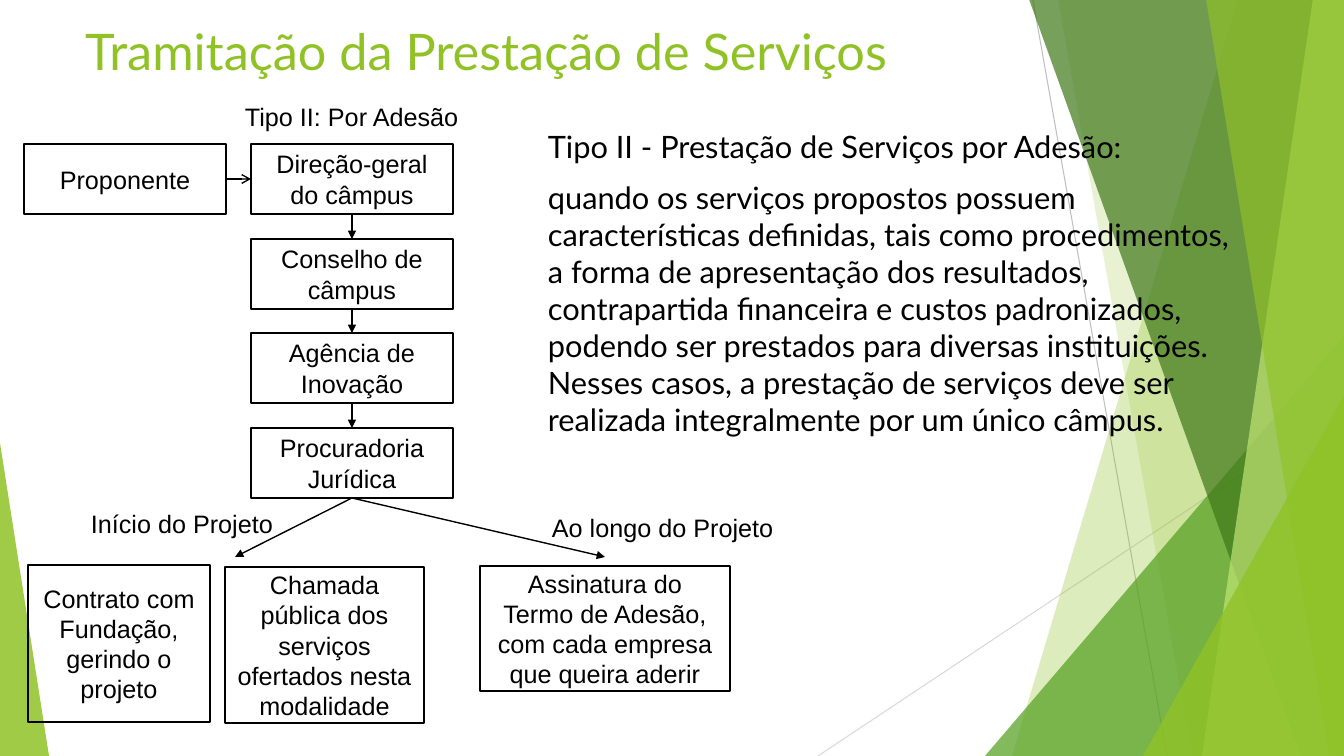
import pptx
import pptx.util
from lxml import etree
from pptx.dml.color import RGBColor
from pptx.enum.shapes import MSO_CONNECTOR, MSO_SHAPE
from pptx.enum.text import MSO_ANCHOR, MSO_AUTO_SIZE, PP_ALIGN
from pptx.oxml.ns import qn

WIDTH, HEIGHT = 1344, 756
EMU_PER_PX = 914400 / 100.8
COLORS = {
    "black": "000000", "lime": "90C226", "green": "54A021", "forest": "3F7819",
    "pale": "C0E474", "gray": "BFBFBF", "light gray": "D9D9D9",
}

TITLE = "Tramitação da Prestação de Serviços"
TITLE_BOX = (75, 15, 948, 80)
BODY = [
    "Tipo II - Prestação de Serviços por Adesão:",
    "quando os serviços propostos possuem características definidas, tais como "
    "procedimentos, a forma de apresentação dos resultados, contrapartida financeira "
    "e custos padronizados, podendo ser prestados para diversas instituições. Nesses "
    "casos, a prestação de serviços deve ser realizada integralmente por um único câmpus.",
]
BODY_BOX = (538, 123, 717, 345)

# Background, back to front: color, opacity in percent, then geometry
BACK_LINES = [("gray", (1033, 0), (1167, 756)), ("light gray", (1344, 406), (818, 756))]
BACK_SHAPES = [
    ("band", "lime", 30, (1238, 1012)),  # top and bottom x of the left edge
    ("band", "lime", 20, (1058, 1192)),
    ("triangle", "green", 72, (985, 336, 359, 420), 1),  # box, apex position
    ("band", "forest", 70, (1029, 1301)),
    ("band", "pale", 70, (1313, 1202)),
    ("band", "lime", 65, (1206, 1329)),
    ("triangle", "lime", 80, (1143, 396, 201, 360), 1),
    ("triangle", "lime", 85, (0, 443, 49, 313), 0),
]

STEPS = ["Direção-geral do câmpus", "Conselho de câmpus",
         "Agência de Inovação", "Procuradoria Jurídica"]
STEP_LEFT, STEP_TOP, STEP_WIDTH, STEP_HEIGHT = 251, 144, 202, 70
LAST_STEP_TOP = 428
PROPONENT_LEFT = 24
OUTCOMES = [
    ("Contrato com Fundação, gerindo o projeto", (28, 565, 182, 157)),
    ("Chamada pública dos serviços ofertados nesta modalidade", (225, 567, 199, 156)),
    ("Assinatura do Termo de Adesão, com cada empresa que queira aderir",
     (480, 566, 250, 125)),
]
BRANCH_ENDS = [(235, 557), (605, 557)]
LABELS = [
    ("Tipo II: Por Adesão", (235, 96, 236, 40)),
    ("Início do Projeto", (81, 503, 209, 40)),
    ("Ao longo do Projeto", (542, 507, 244, 40)),
]


def px(*lengths):
    return [pptx.util.Emu(round(length * EMU_PER_PX)) for length in lengths]


def rgb(name):
    return RGBColor.from_string(COLORS[name])


def write(shape, paragraphs, font, size, color="black", align=PP_ALIGN.LEFT, before=0):
    frame = shape.text_frame
    frame.text = "\n".join(paragraphs)
    for paragraph in frame.paragraphs:
        paragraph.alignment = align
        paragraph.space_before = pptx.util.Pt(before)
        paragraph.font.name = font
        paragraph.font.size = pptx.util.Pt(size)
        paragraph.font.color.rgb = rgb(color)
    return frame


def add_line(shapes, start, end, color="black", width=1, head=None):
    line = shapes.add_connector(MSO_CONNECTOR.STRAIGHT, *px(*start, *end))
    line.line.color.rgb = rgb(color)
    line.line.width = pptx.util.Pt(width)
    if head:
        etree.SubElement(line.line._get_or_add_ln(), qn("a:tailEnd"), type=head)
    etree.SubElement(line._element.spPr, qn("a:effectLst"))


def add_back_shape(shapes, kind, color, opacity, geometry, apex=None):
    if kind == "band":
        top_x, bottom_x = geometry
        builder = shapes.build_freeform(top_x, -1, scale=EMU_PER_PX)
        builder.add_line_segments([(WIDTH, -1), (WIDTH, HEIGHT), (bottom_x, HEIGHT)])
        shape = builder.convert_to_shape()
    else:
        shape = shapes.add_shape(MSO_SHAPE.ISOSCELES_TRIANGLE, *px(*geometry))
        shape.adjustments[0] = apex
    shape.shadow.inherit = False
    shape.line.fill.background()
    shape.fill.solid()
    shape.fill.fore_color.rgb = rgb(color)
    fill_color = shape._element.spPr.find(qn("a:solidFill"))[0]
    etree.SubElement(fill_color, qn("a:alpha"), val=str(opacity * 1000))


def add_box(shapes, text, box):
    shape = shapes.add_shape(MSO_SHAPE.RECTANGLE, *px(*box))
    shape.shadow.inherit = False
    shape.fill.background()
    shape.line.color.rgb = rgb("black")
    shape.line.width = pptx.util.Pt(1.5)
    frame = write(shape, [text], "Arial", 18, align=PP_ALIGN.CENTER)
    frame.word_wrap = True
    frame.vertical_anchor = MSO_ANCHOR.MIDDLE


def add_flow(shapes):
    pitch = (LAST_STEP_TOP - STEP_TOP) / (len(STEPS) - 1)
    tops = [round(STEP_TOP + index * pitch) for index in range(len(STEPS))]
    center = STEP_LEFT + STEP_WIDTH // 2
    for text, top in zip(STEPS, tops):
        add_box(shapes, text, (STEP_LEFT, top, STEP_WIDTH, STEP_HEIGHT))
    for top, next_top in zip(tops, tops[1:]):
        add_line(shapes, (center, top + STEP_HEIGHT), (center, next_top), head="triangle")

    add_box(shapes, "Proponente", (PROPONENT_LEFT, STEP_TOP, STEP_WIDTH, STEP_HEIGHT))
    middle = STEP_TOP + STEP_HEIGHT // 2
    add_line(shapes, (PROPONENT_LEFT + STEP_WIDTH, middle), (STEP_LEFT, middle), head="arrow")

    for text, box in OUTCOMES:
        add_box(shapes, text, box)
    for end in BRANCH_ENDS:
        add_line(shapes, (center, tops[-1] + STEP_HEIGHT), end, head="triangle")


def main():
    presentation = pptx.Presentation()
    presentation.slide_width, presentation.slide_height = px(WIDTH, HEIGHT)
    slide = presentation.slides.add_slide(presentation.slide_layouts[5])
    shapes = slide.shapes

    for color, start, end in BACK_LINES:
        add_line(shapes, start, end, color, 0.75)
    for back_shape in BACK_SHAPES:
        add_back_shape(shapes, *back_shape)

    title = shapes.title
    title.left, title.top, title.width, title.height = px(*TITLE_BOX)
    frame = write(title, [TITLE], "Lato", 36, "lime")
    frame.vertical_anchor = MSO_ANCHOR.TOP
    frame.auto_size = MSO_AUTO_SIZE.NONE

    add_flow(shapes)
    for text, box in LABELS:
        frame = write(shapes.add_textbox(*px(*box)), [text], "Arial", 18)
        frame.word_wrap = False
        frame.auto_size = MSO_AUTO_SIZE.SHAPE_TO_FIT_TEXT

    body = shapes.add_textbox(*px(*BODY_BOX))
    write(body, BODY, "Lato", 22, before=10).word_wrap = True
    presentation.save("out.pptx")


if __name__ == "__main__":
    main()
